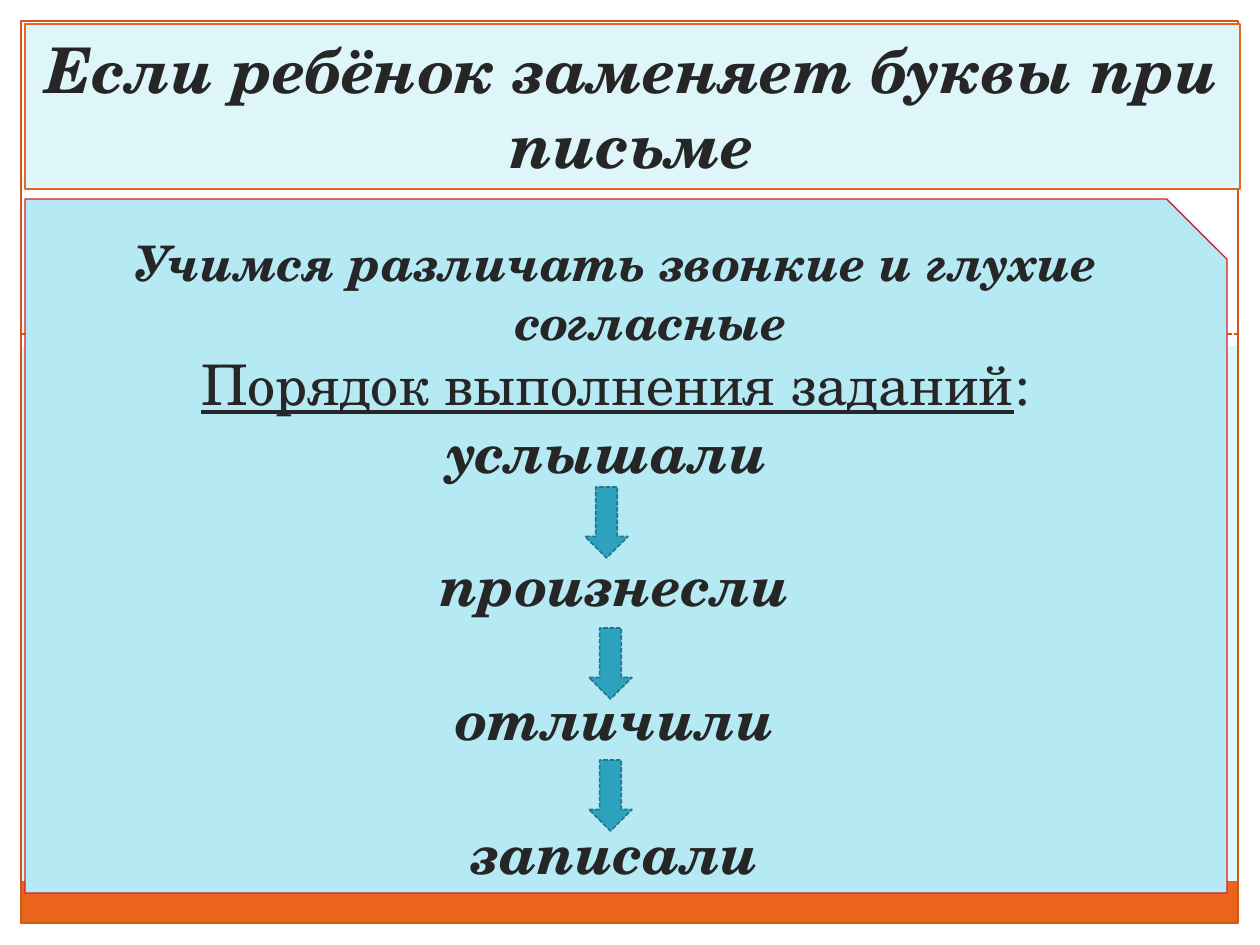
import pptx
import pptx.util
import pptx.dml.color
import pptx.enum.dml
import pptx.enum.shapes
import pptx.enum.text
import pptx.oxml.ns
import lxml.etree
from dataclasses import dataclass

SHAPE = pptx.enum.shapes.MSO_SHAPE
DASH = pptx.enum.dml.MSO_LINE.SQUARE_DOT
EMU_PER_PX = 914400 / 126


@dataclass(frozen=True)
class Theme:
    font: str = "TeX Gyre Schola"
    ink: str = "262626"
    white: str = "FFFFFF"
    pale: str = "DEF5FA"
    panel: str = "B5E9F4"
    panel_edge: str = "DA1F28"
    orange: str = "EB641B"
    orange_edge: str = "CF5818"
    arrow: str = "2DA2BF"
    arrow_edge: str = "21788D"
    title_size: int = 36
    topic_size: int = 28
    step_size: int = 32
    thin: float = 0.75
    dashed: float = 0.9


theme = Theme()


def px(length):
    return pptx.util.Emu(round(length * EMU_PER_PX))


def paint(part, fill=None, edge=None, width=theme.thin, dash=None):
    """Fill and outline a shape; None leaves that side of it empty."""
    if fill:
        part.fill.solid()
        part.fill.fore_color.rgb = pptx.dml.color.RGBColor.from_string(fill)
    else:
        part.fill.background()
    if edge:
        part.line.color.rgb = pptx.dml.color.RGBColor.from_string(edge)
        part.line.width = pptx.util.Pt(width)
        part.line.dash_style = dash
    else:
        part.line.fill.background()


deck = pptx.Presentation()
deck.slide_width, deck.slide_height = px(1260), px(945)
slide = deck.slides.add_slide(deck.slide_layouts[5])
shapes = slide.shapes
ink = pptx.dml.color.RGBColor.from_string(theme.ink)
slide.background.fill.solid()
slide.background.fill.fore_color.rgb = pptx.dml.color.RGBColor.from_string(theme.pale)

# White margins, white header area and the orange footer
for left, top, width, height, colour in [
    (0, 924, 1260, 21, theme.white),
    (1239, 0, 21, 945, theme.white),
    (0, 0, 21, 945, theme.white),
    (0, 0, 1260, 346, theme.white),
    (21, 881, 1217, 43, theme.orange),
]:
    band = shapes.add_shape(SHAPE.RECTANGLE, px(left), px(top), px(width), px(height))
    band.shadow.inherit = False
    paint(band, colour)

divider = shapes.add_connector(
    pptx.enum.shapes.MSO_CONNECTOR.STRAIGHT, px(21), px(334), px(1239), px(334))
divider.line.color.rgb = pptx.dml.color.RGBColor.from_string(theme.orange_edge)
divider.line.width = pptx.util.Pt(theme.dashed)
divider.line.dash_style = DASH
lxml.etree.SubElement(divider._element.spPr, pptx.oxml.ns.qn("a:effectLst"))

frame = shapes.add_shape(SHAPE.RECTANGLE, px(21), px(21), px(1217), px(902))
frame.shadow.inherit = False
paint(frame, edge=theme.orange_edge)

panel = shapes.add_shape(SHAPE.SNIP_1_RECTANGLE, px(25), px(199), px(1202), px(694))
panel.adjustments[0] = 0.087
panel.shadow.inherit = False
paint(panel, theme.panel, theme.panel_edge)

# Each line: runs, size, emphasised, space before in points
lines = [
    (["Учимся различать звонкие и глухие согласные"], theme.topic_size, True, 0),
    (["Порядок выполнения заданий", ":"], theme.step_size, False, 0),
    (["услышали "], theme.step_size, True, 0),
    (["произнесли"], theme.step_size, True, 38),
    (["отличили"], theme.step_size, True, 38),
    (["записали"], theme.step_size, True, 38),
]
procedure = shapes.add_textbox(px(19), px(226), px(1193), px(667)).text_frame
procedure.word_wrap = True
for number, (pieces, size, emphasised, gap) in enumerate(lines):
    line = procedure.add_paragraph() if number else procedure.paragraphs[0]
    line.alignment = pptx.enum.text.PP_ALIGN.CENTER
    line.space_before = pptx.util.Pt(gap)
    properties = line._p.get_or_add_pPr()
    properties.set("marL", str(px(71)))
    properties.set("indent", str(-px(71)))
    for piece in pieces:
        run = line.add_run()
        run.text = piece
        run.font.name = theme.font
        run.font.size = pptx.util.Pt(size)
        run.font.bold = run.font.italic = emphasised
        run.font.underline = not emphasised and piece != ":"
        run.font.color.rgb = ink

for left, top in [(585, 487), (589, 628), (589, 760)]:
    arrow = shapes.add_shape(SHAPE.DOWN_ARROW, px(left), px(top), px(43), px(71))
    arrow.shadow.inherit = False
    paint(arrow, theme.arrow, theme.arrow_edge, theme.dashed, DASH)

title = shapes.title
title.left, title.top, title.width, title.height = px(25), px(24), px(1215), px(165)
paint(title, theme.pale, theme.orange)
heading = title.text_frame
heading.text = "Если ребёнок заменяет буквы при письме"
heading.word_wrap = True
heading.auto_size = pptx.enum.text.MSO_AUTO_SIZE.NONE
heading.vertical_anchor = pptx.enum.text.MSO_ANCHOR.TOP
heading.paragraphs[0].alignment = pptx.enum.text.PP_ALIGN.CENTER
heading_font = heading.paragraphs[0].runs[0].font
heading_font.name = theme.font
heading_font.size = pptx.util.Pt(theme.title_size)
heading_font.bold = heading_font.italic = True
heading_font.color.rgb = ink
# The title lies in front of the frame and bands
shapes._spTree.append(title._element)

deck.save("out.pptx")
